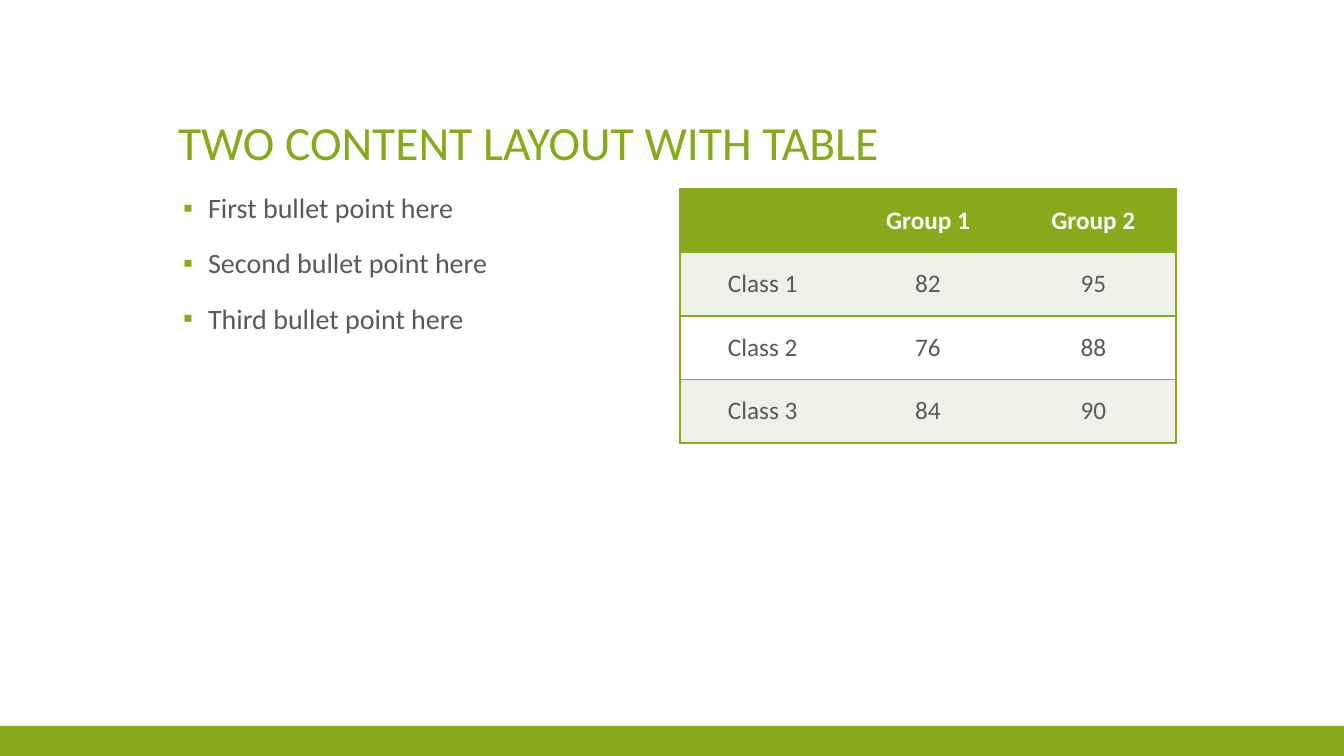
from lxml.etree import SubElement
from pptx import Presentation
from pptx.dml.color import RGBColor
from pptx.enum.shapes import MSO_SHAPE
from pptx.enum.text import MSO_ANCHOR, MSO_AUTO_SIZE, PP_ALIGN
from pptx.oxml.ns import qn
from pptx.util import Emu, Pt

SCALE = 12192000 / 1344
GREEN, GREY, WHITE, PALE = "87A91B", "595959", "FFFFFF", "EDF1E8"
BULLETS = ["First bullet point here", "Second bullet point here", "Third bullet point here"]
SCORES = [
    ["", "Group 1", "Group 2"],
    ["Class 1", "82", "95"],
    ["Class 2", "76", "88"],
    ["Class 3", "84", "90"],
]


def px(*lengths):
    """Turn pixel lengths into a list of EMU lengths."""
    return [Emu(round(length * SCALE)) for length in lengths]


def style(paragraph, size, color, align, bold=False):
    paragraph.alignment = align
    font = paragraph.font
    font.name, font.size, font.bold = "Calibri", Pt(size), bold
    font.color.rgb = RGBColor.from_string(color)


prs = Presentation()
prs.slide_width, prs.slide_height = px(1344, 756)
slide = prs.slides.add_slide(prs.slide_layouts[1])

# Footer band
band = slide.shapes.add_shape(MSO_SHAPE.RECTANGLE, *px(0, 726, 1344, 30))
band.shadow.inherit = False
band.fill.solid()
band.fill.fore_color.rgb = RGBColor.from_string(GREEN)
band.line.fill.background()

# Title
title = slide.shapes.title
title.left, title.top, title.width, title.height = px(168, 50, 1008, 126)
title.text_frame.text = "TWO CONTENT LAYOUT WITH TABLE"
title.text_frame.auto_size = MSO_AUTO_SIZE.NONE
title.text_frame.vertical_anchor = MSO_ANCHOR.BOTTOM
heading = title.text_frame.paragraphs[0]
heading.line_spacing = 0.9
style(heading, 34, GREEN, PP_ALIGN.LEFT)

# Bullet list
body = slide.placeholders[1]
body.left, body.top, body.width, body.height = px(168, 189, 496, 491)
body.text_frame.text = "\n".join(BULLETS)
body.text_frame.auto_size = MSO_AUTO_SIZE.NONE
margin, hanging = px(30, -25)
for point in body.text_frame.paragraphs:
    style(point, 20, GREY, PP_ALIGN.LEFT)
    point.line_spacing = 0.9
    point.space_before = Pt(18)
    properties = point._p.get_or_add_pPr()
    properties.set("marL", str(margin))
    properties.set("indent", str(hanging))
    bullet_color = SubElement(properties, qn("a:buClr"))
    SubElement(bullet_color, qn("a:srgbClr"), val=GREEN)
    SubElement(properties, qn("a:buChar"), char="▪")

# Score table: green outline and row rules, no inner vertical rules
row_count, column_count = len(SCORES), len(SCORES[0])
table = slide.shapes.add_table(row_count, column_count, *px(680, 189, 496, 254)).table
for r, row in enumerate(SCORES):
    for c, value in enumerate(row):
        cell = table.cell(r, c)
        cell.text = value
        cell.vertical_anchor = MSO_ANCHOR.MIDDLE
        header = r == 0
        style(cell.text_frame.paragraphs[0], 18, WHITE if header else GREY, PP_ALIGN.CENTER, header)

        cell_properties = cell._tc.get_or_add_tcPr()
        ruled = {"L": c == 0, "R": c == column_count - 1, "T": True, "B": True}
        for side, visible in ruled.items():
            border = SubElement(cell_properties, qn(f"a:ln{side}"), w=str(Pt(1)))
            if visible:
                SubElement(SubElement(border, qn("a:solidFill")), qn("a:srgbClr"), val=GREEN)
            else:
                SubElement(border, qn("a:noFill"))

        cell.fill.solid()
        row_fill = GREEN if header else PALE if r % 2 else WHITE
        cell.fill.fore_color.rgb = RGBColor.from_string(row_fill)

prs.save("out.pptx")
